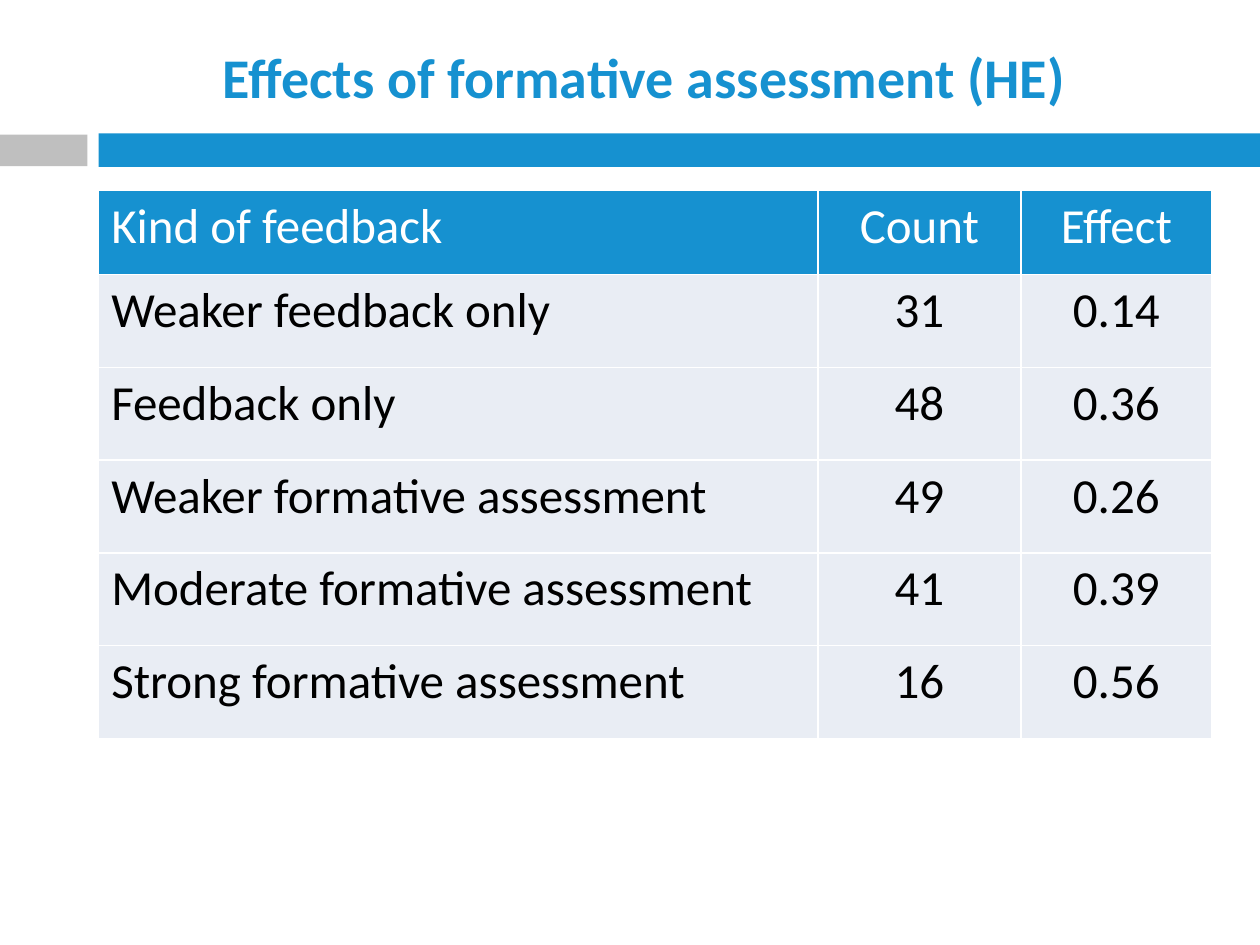
from dataclasses import dataclass

from lxml.etree import SubElement
from pptx import Presentation
from pptx.dml.color import RGBColor
from pptx.enum.shapes import MSO_SHAPE
from pptx.enum.text import MSO_ANCHOR, PP_ALIGN
from pptx.oxml.ns import qn
from pptx.util import Pt


@dataclass(frozen=True)
class Theme:
    font: str = "Calibri"
    blue: str = "1691D0"
    gray: str = "BFBFBF"
    pale: str = "E9EDF4"
    white: str = "FFFFFF"
    black: str = "000000"
    title: int = 32
    body: int = 28


class Deck:
    def __init__(self, theme, wide, high):
        self.theme = theme
        self.prs = Presentation()
        self.prs.slide_width, self.prs.slide_height = Pt(wide), Pt(high)
        self.slide = self.prs.slides.add_slide(self.prs.slide_layouts[6])

    def label(self, frame, text, size, color, align, bold=False):
        frame.text = text
        para = frame.paragraphs[0]
        para.alignment = align
        font = para.runs[0].font
        font.name, font.size, font.bold = self.theme.font, Pt(size), bold
        font.color.rgb = RGBColor.from_string(color)

    def bar(self, box, color):
        shape = self.slide.shapes.add_shape(MSO_SHAPE.RECTANGLE, *map(Pt, box))
        shape.shadow.inherit = False
        shape.fill.solid()
        shape.fill.fore_color.rgb = RGBColor.from_string(color)
        shape.line.fill.background()

    def title(self, box, text):
        frame = self.slide.shapes.add_textbox(*map(Pt, box)).text_frame
        frame.word_wrap = True
        frame.vertical_anchor = MSO_ANCHOR.MIDDLE
        self.label(frame, text, self.theme.title, self.theme.blue,
                   PP_ALIGN.CENTER, True)

    def edge(self, cell):
        props = cell._tc.get_or_add_tcPr()
        for side in ("lnL", "lnR", "lnT", "lnB"):
            line = SubElement(props, qn(f"a:{side}"), w=str(Pt(1)))
            fill = SubElement(line, qn("a:solidFill"))
            SubElement(fill, qn("a:srgbClr"), val=self.theme.white)

    def table(self, left, top, cols, rows, data):
        look = self.theme
        table = self.slide.shapes.add_table(
            len(rows), len(cols), Pt(left), Pt(top),
            Pt(sum(cols)), Pt(sum(rows))).table
        for col, wide in zip(table.columns, cols):
            col.width = Pt(wide)
        for row, high in zip(table.rows, rows):
            row.height = Pt(high)
        for r, line in enumerate(data):
            fill, ink = (look.pale, look.black) if r else (look.blue, look.white)
            for c, text in enumerate(line):
                cell = table.cell(r, c)
                self.edge(cell)
                cell.fill.solid()
                cell.fill.fore_color.rgb = RGBColor.from_string(fill)
                align = PP_ALIGN.CENTER if c else PP_ALIGN.LEFT
                self.label(cell.text_frame, text, look.body, ink, align)


def main():
    theme = Theme()
    deck = Deck(theme, 720, 540)
    left = 56.4

    # Bars under the title
    deck.bar((left, 76.2, 720 - left, 19.2), theme.blue)
    deck.bar((0, 77, 50, 18), theme.gray)

    # Title
    deck.title((left, 19, 623.5, 49), "Effects of formative assessment (HE)")

    # Effect sizes by kind of feedback
    data = [
        ("Kind of feedback", "Count", "Effect"),
        ("Weaker feedback only", "31", "0.14"),
        ("Feedback only", "48", "0.36"),
        ("Weaker formative assessment", "49", "0.26"),
        ("Moderate formative assessment", "41", "0.39"),
        ("Strong formative assessment", "16", "0.56"),
    ]
    rows = [48] + [53] * (len(data) - 1)
    deck.table(left, 109, (411, 116, 109), rows, data)

    deck.prs.save("out.pptx")


if __name__ == "__main__":
    main()
